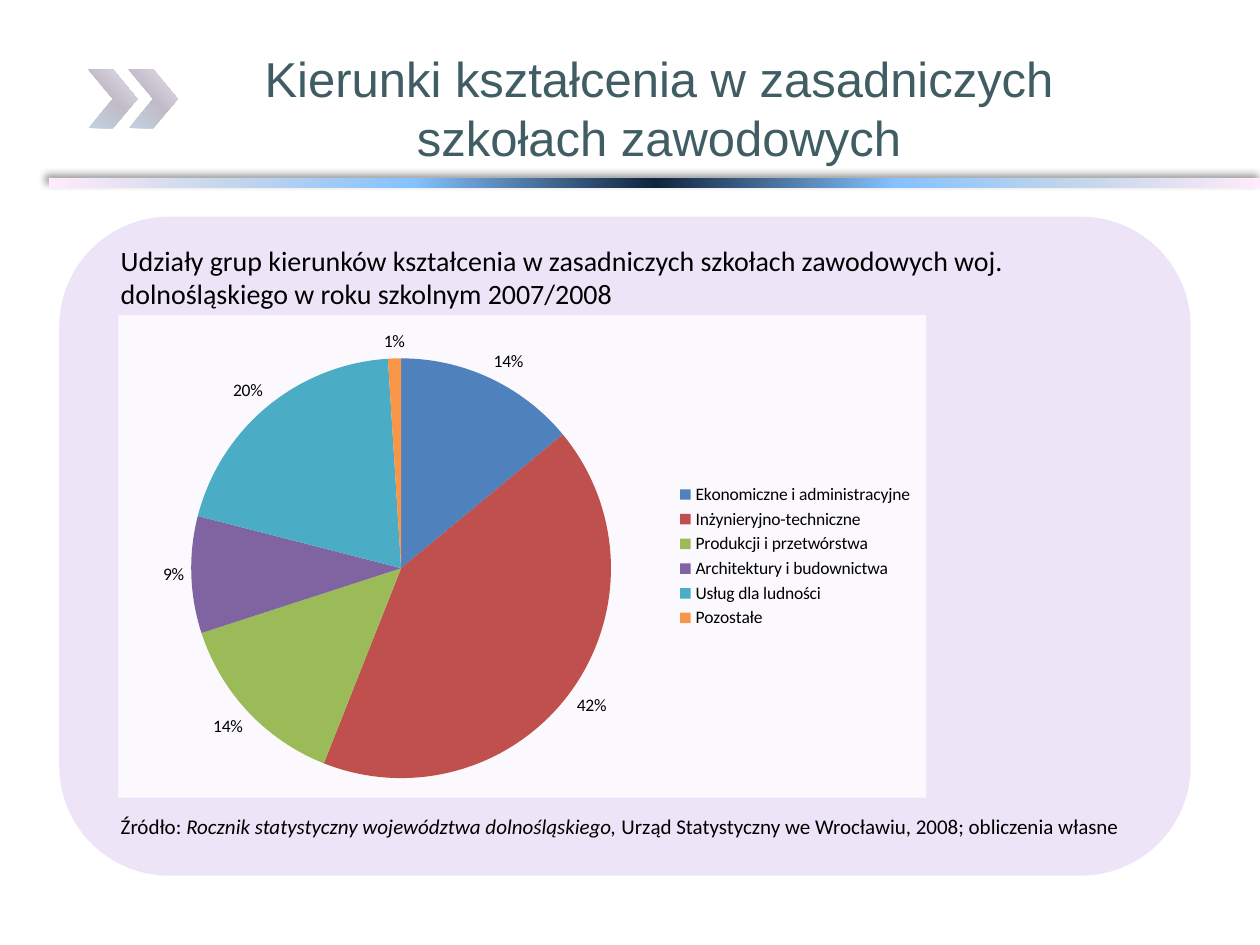
from lxml import etree
from pptx import Presentation
from pptx.chart.data import CategoryChartData
from pptx.dml.color import RGBColor
from pptx.enum.chart import XL_CHART_TYPE, XL_LABEL_POSITION as LABEL_POS, XL_LEGEND_POSITION as LEGEND_POS
from pptx.enum.shapes import MSO_SHAPE as SHAPE
from pptx.enum.text import MSO_ANCHOR, MSO_AUTO_SIZE, PP_ALIGN
from pptx.oxml import parse_xml
from pptx.oxml.ns import nsdecls, qn
from pptx.util import Inches, Pt

BAR_STOPS = [(0, "FFEBFA"), (15, "C4D6EB"), (30, "85C2FF"), (50, "0F243E"),
             (70, "85C2FF"), (85, "C4D6EB"), (100, "FFEBFA")]
CHEVRON_STOPS = [(0, "C1D2E1"), (50, "C1BCC8"), (100, "E6DFED")]
SHARES = [
    ("Ekonomiczne i administracyjne", 14, "4F81BD"),
    ("Inżynieryjno-techniczne", 42, "C0504D"),
    ("Produkcji i przetwórstwa", 14, "9BBB59"),
    ("Architektury i budownictwa", 9, "8064A2"),
    ("Usług dla ludności", 20, "4BACC6"),
    ("Pozostałe", 1, "F79646"),
]


def rgb(color):
    return RGBColor.from_string(color)


def box(at):
    return [Inches(v) for v in at]


def style_font(font, name, size, color):
    font.name, font.size = name, Pt(size)
    font.color.rgb = rgb(color)


def add_shape(slide, kind, at):
    sp = slide.shapes.add_shape(kind, *box(at))
    sp.shadow.inherit = False
    sp.line.fill.background()
    return sp


def set_gradient(sp, stops, angle):
    sp.fill.gradient()
    sp.fill.gradient_angle = 0
    grad = sp._element.spPr.find(qn("a:gradFill"))
    gs_list = grad.find(qn("a:gsLst"))
    for gs in list(gs_list):
        gs_list.remove(gs)
    for pos, color in stops:
        gs = etree.SubElement(gs_list, qn("a:gs"), pos=str(pos * 1000))
        etree.SubElement(gs, qn("a:srgbClr"), val=color)
    grad.find(qn("a:lin")).set("ang", str(angle * 60000))


def set_shadow(sp, color, alpha, blur, dist, angle):
    effects = sp._element.spPr.find(qn("a:effectLst"))
    shadow = etree.SubElement(effects, qn("a:outerShdw"), blurRad=str(Pt(blur)),
                              dist=str(Pt(dist)), dir=str(angle * 60000))
    clr = etree.SubElement(shadow, qn("a:srgbClr"), val=color)
    etree.SubElement(clr, qn("a:alpha"), val=str(alpha * 1000))


def set_alpha(sp, color, alpha):
    sp.fill.solid()
    sp.fill.fore_color.rgb = rgb(color)
    clr = sp._element.spPr.find(".//" + qn("a:srgbClr"))
    etree.SubElement(clr, qn("a:alpha"), val=str(alpha * 1000))


def set_title(slide, text):
    title = slide.shapes.title
    title.left, title.top, title.width, title.height = box((1.48, 0.23, 7.5, 1.25))
    tf = title.text_frame
    tf.text = text
    tf.auto_size = MSO_AUTO_SIZE.NONE
    tf.vertical_anchor = MSO_ANCHOR.MIDDLE
    p = tf.paragraphs[0]
    p.alignment = PP_ALIGN.CENTER
    style_font(p.runs[0].font, "Arial", 28, "3F5D63")


def add_text(slide, at, size, runs):
    tf = slide.shapes.add_textbox(*box(at)).text_frame
    tf.word_wrap = True
    for text, italic in runs:
        r = tf.paragraphs[0].add_run()
        r.text = text
        style_font(r.font, "Calibri", size, "000000")
        r.font.italic = italic


def add_pie(slide, at):
    data = CategoryChartData()
    data.categories = [name for name, _, _ in SHARES]
    data.add_series("Series 1", [share for _, share, _ in SHARES])
    chart = slide.shapes.add_chart(XL_CHART_TYPE.PIE, *box(at), data).chart
    style_font(chart.font, "Calibri", 10, "000000")
    chart.has_title = False
    chart.has_legend = True
    chart.legend.position = LEGEND_POS.RIGHT
    chart.legend.include_in_layout = False

    plot = chart.plots[0]
    plot.vary_by_categories = True
    for i, (_, _, color) in enumerate(SHARES):
        fill = plot.series[0].points[i].format.fill
        fill.solid()
        fill.fore_color.rgb = rgb(color)
    plot.has_data_labels = True
    labels = plot.data_labels
    labels.show_value = False
    labels.show_percentage = True
    labels.number_format, labels.number_format_is_linked = "0%", False
    labels.position = LABEL_POS.OUTSIDE_END

    # Fixed pie area
    area = chart._chartSpace.chart.plotArea
    for old in area.findall(qn("c:layout")):
        area.remove(old)
    sizes = "".join(f'<c:{k} val="{v}"/>' for k, v in
                    [("x", 0.09), ("y", 0.09), ("w", 0.52), ("h", 0.87)])
    area.insert(0, parse_xml(
        f'<c:layout {nsdecls("c")}><c:manualLayout><c:layoutTarget val="inner"/>'
        f'<c:xMode val="edge"/><c:yMode val="edge"/>{sizes}</c:manualLayout></c:layout>'))

    # Translucent white background
    chart._chartSpace.chart.addnext(parse_xml(
        f'<c:spPr {nsdecls("c", "a")}><a:solidFill><a:srgbClr val="FFFFFF">'
        '<a:alpha val="81000"/></a:srgbClr></a:solidFill><a:ln><a:noFill/></a:ln></c:spPr>'))


def main():
    prs = Presentation()
    prs.slide_width, prs.slide_height = Inches(10), Inches(7.5)
    slide = prs.slides.add_slide(prs.slide_layouts[5])

    # Header: divider bar, chevrons and title
    bar = add_shape(slide, SHAPE.RECTANGLE, (0.39, 1.41, 9.61, 0.08))
    set_gradient(bar, BAR_STOPS, 0)
    set_shadow(bar, "000000", 40, 4, 3, 225)
    for left in (1.02, 0.7):
        chevron = add_shape(slide, SHAPE.CHEVRON, (left, 0.55, 0.39, 0.47))
        set_gradient(chevron, CHEVRON_STOPS, 315)
    set_title(slide, "Kierunki kształcenia w zasadniczych szkołach zawodowych")

    # Panel with heading, chart and source
    panel = add_shape(slide, SHAPE.ROUNDED_RECTANGLE, (0.47, 1.72, 8.98, 5.23))
    set_alpha(panel, "E5D7F5", 65)
    add_text(slide, (0.86, 1.88, 8.2, 0.91), 16, [
        ("Udziały grup kierunków kształcenia w zasadniczych szkołach zawodowych "
         "woj. dolnośląskiego w roku szkolnym 2007/2008", False)])
    add_text(slide, (0.86, 6.41, 8.2, 0.71), 12, [
        ("Źródło: ", False),
        ("Rocznik statystyczny województwa dolnośląskiego,", True),
        (" Urząd Statystyczny we Wrocławiu, 2008; obliczenia własne", False)])
    add_pie(slide, (0.94, 2.5, 6.41, 3.83))

    prs.save("out.pptx")


if __name__ == "__main__":
    main()
